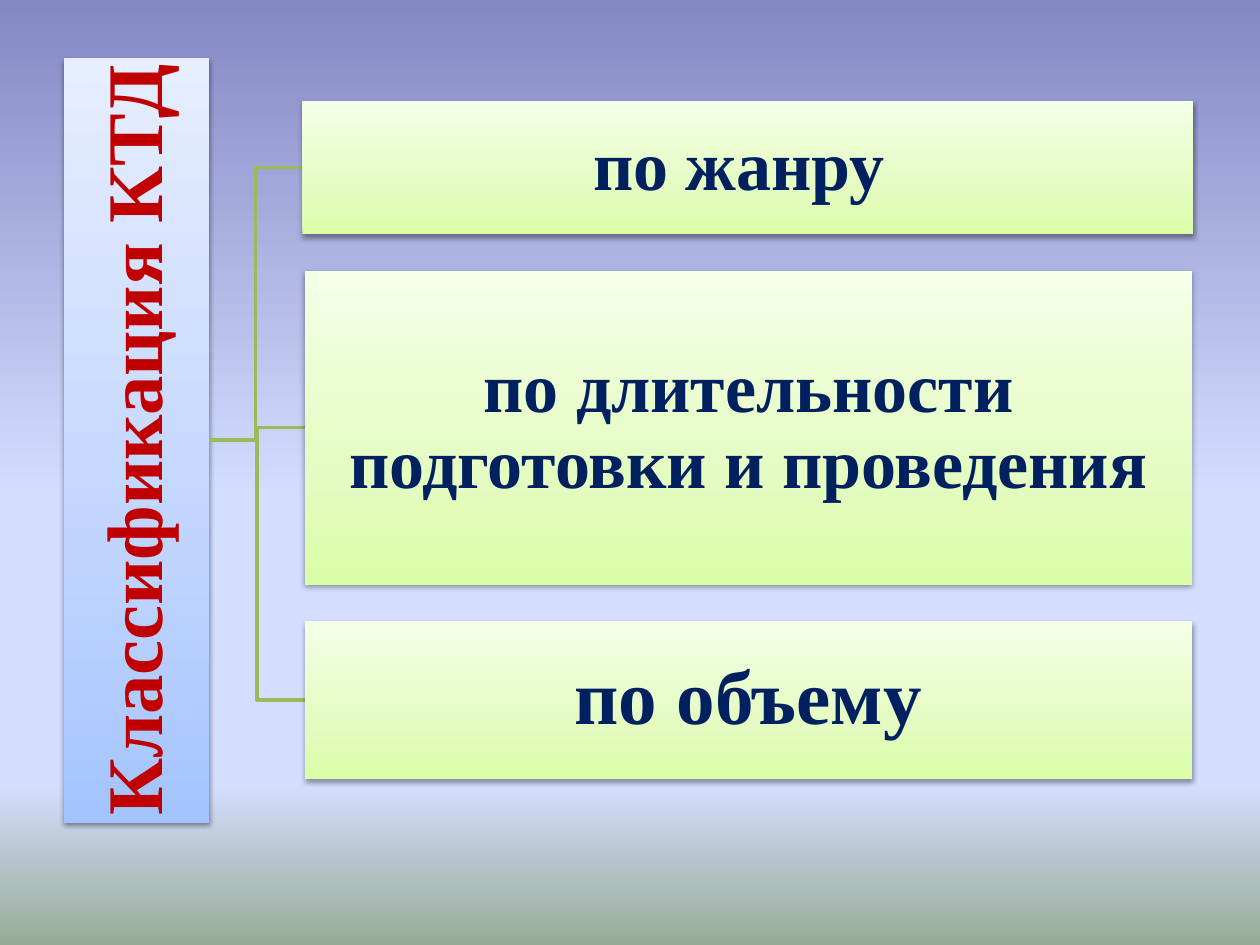
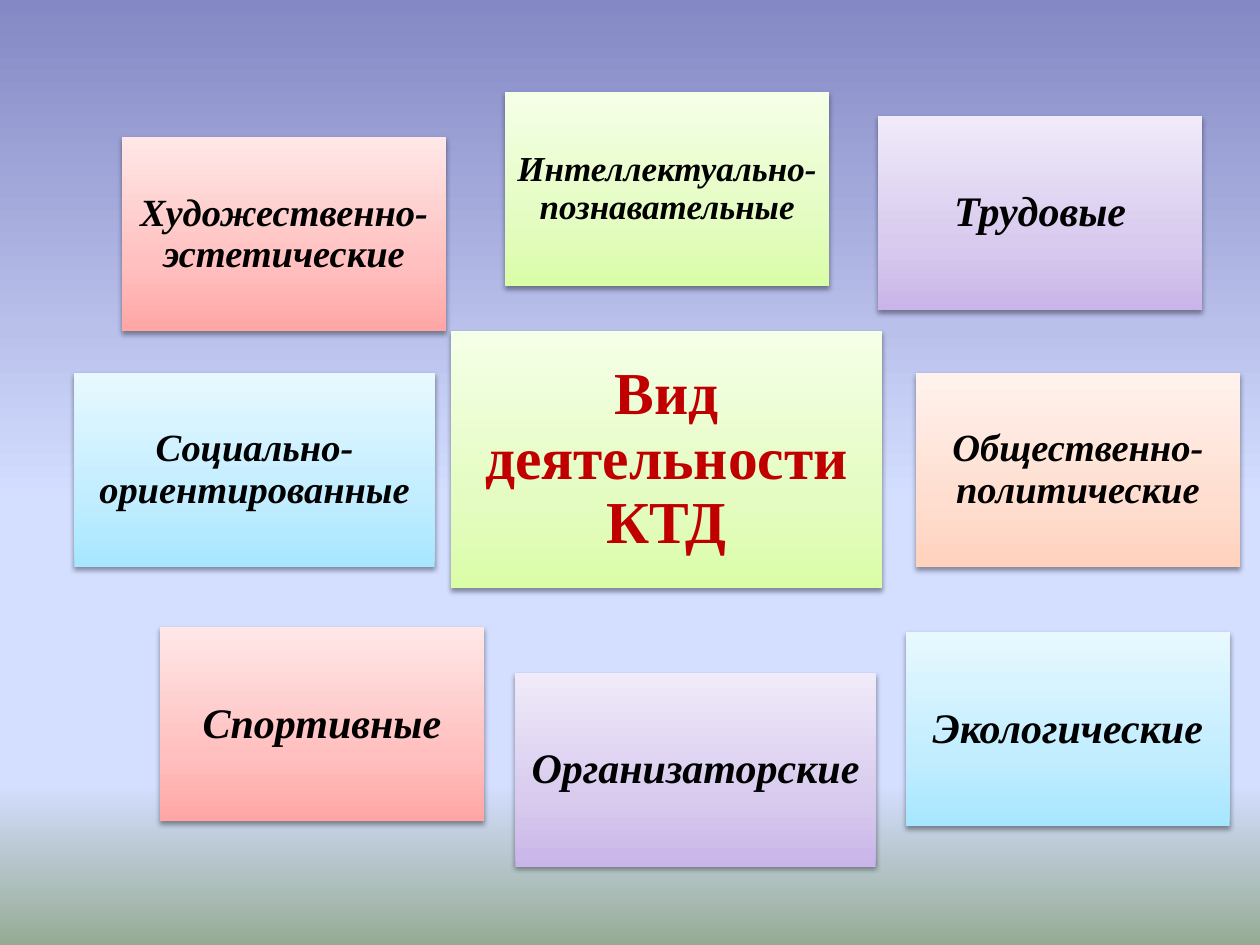
from copy import deepcopy

from lxml.etree import SubElement
from pptx import Presentation
from pptx.dml.color import RGBColor
from pptx.enum.shapes import MSO_CONNECTOR as CONNECTOR, MSO_SHAPE as SHAPE
from pptx.enum.text import MSO_ANCHOR as ANCHOR, MSO_AUTO_SIZE as AUTO_SIZE, PP_ALIGN as ALIGN
from pptx.oxml.ns import qn
from pptx.util import Inches, Pt

FONT = "Times New Roman"
TITLE_ONLY = 5

RED = RGBColor(0xC0, 0x00, 0x00)
NAVY = RGBColor(0x00, 0x20, 0x60)
BLACK = RGBColor(0x00, 0x00, 0x00)
BRANCH_GREEN = RGBColor(0x9B, 0xBB, 0x59)


def card_stops(dark, middle, light):
    """Gradient stops of a card, from its bottom edge to its top."""
    return tuple(zip((0, 0.35, 1), map(RGBColor.from_string, (dark, middle, light))))


BLUE = card_stops("A4C4FF", "BFD4FF", "E6EEFF")
GREEN = card_stops("DAFDA7", "E4FCC2", "F5FFE7")
PINK = card_stops("FFA6A5", "FFC0BF", "FFE7E7")
VIOLET = card_stops("C9B5E8", "D8CBEE", "F0EAF9")
CYAN = card_stops("A7E6FF", "C1EDFF", "E7F8FF")
ORANGE = card_stops("FFD2BD", "FFDED0", "FFF2ED")

SKY = RGBColor(0xD4, 0xDE, 0xFF)
BACKGROUND = (
    (0, RGBColor(0x84, 0x88, 0xC4)),
    (0.53, SKY),
    (0.83, SKY),
    (1, RGBColor(0x96, 0xAB, 0x94)),
)


def paint_gradient(fill, owner, stops, angle):
    """Give fill, which lies inside the element owner, any number of stops."""
    fill.gradient()
    fill.gradient_angle = angle
    gradient = next(owner.iter(qn("a:gradFill")))
    gradient.set("rotWithShape", "0")
    stop_list = gradient.find(qn("a:gsLst"))
    for _ in stops[2:]:
        stop_list.append(deepcopy(stop_list[0]))
    for stop, (position, color) in zip(fill.gradient_stops, stops):
        stop.position = position
        stop.color.rgb = color


def add_soft_shadow(shape):
    shape.shadow.inherit = False
    effects = shape._element.spPr.find(qn("a:effectLst"))
    shadow = SubElement(effects, qn("a:outerShdw"), blurRad=str(Pt(3.1)), dist=str(Pt(1.6)),
                        dir="5400000", rotWithShape="0")
    color = SubElement(shadow, qn("a:srgbClr"), val="000000")
    SubElement(color, qn("a:alpha"), val="38000")


def write_text(frame, text, *, size, color=BLACK, italic=False, inset=0.03):
    frame.word_wrap = True
    frame.auto_size = AUTO_SIZE.NONE
    frame.vertical_anchor = ANCHOR.MIDDLE
    frame.margin_left = frame.margin_right = Inches(inset)
    frame.margin_top = frame.margin_bottom = Inches(inset)
    paragraph = frame.paragraphs[0]
    paragraph.alignment = ALIGN.CENTER
    paragraph.line_spacing = 0.9
    run = paragraph.add_run()
    run.text = text
    run.font.name = FONT
    run.font.size = Pt(size)
    run.font.bold = True
    run.font.italic = italic
    run.font.color.rgb = color


class Deck:
    def __init__(self):
        self.presentation = Presentation()
        self.presentation.slide_width = Inches(10)
        self.presentation.slide_height = Inches(7.5)
        master = self.presentation.slide_master
        paint_gradient(master.background.fill, master._element, BACKGROUND, 270)
        self.slide = None

    def new_slide(self):
        layout = self.presentation.slide_layouts[TITLE_ONLY]
        self.slide = self.presentation.slides.add_slide(layout)

    def style_card(self, card, text, stops, **text_format):
        paint_gradient(card.fill, card._element, stops, 90)
        card.line.fill.background()
        add_soft_shadow(card)
        write_text(card.text_frame, text, **text_format)

    def title(self, text, box, stops, rotation=0, **text_format):
        heading = self.slide.shapes.title
        heading.left, heading.top, heading.width, heading.height = map(Inches, box)
        heading.rotation = rotation
        self.style_card(heading, text, stops, color=RED, **text_format)

    def card(self, text, box, stops, **text_format):
        card = self.slide.shapes.add_shape(SHAPE.RECTANGLE, *map(Inches, box))
        self.style_card(card, text, stops, **text_format)

    def branch(self, start, end):
        branch = self.slide.shapes.add_connector(CONNECTOR.ELBOW, *map(Inches, start + end))
        branch.line.color.rgb = BRANCH_GREEN
        branch.line.width = Pt(2)
        SubElement(branch._element.spPr, qn("a:effectLst"))

    def save(self):
        self.presentation.save("out.pptx")


def build_classification(deck):
    deck.new_slide()
    deck.title("Классификация КТД", (-1.95, 2.92, 6.07, 1.15), BLUE, rotation=270, size=45)
    root_end = (1.66, 3.49)
    criteria = (
        ("по жанру ", (2.4, 0.8, 7.07, 1.06), 40),
        ("по длительности подготовки и проведения", (2.42, 2.15, 7.04, 2.49), 40),
        ("по объему", (2.42, 4.93, 7.04, 1.25), 44),
    )
    for text, box, size in criteria:
        left, top, _, height = box
        deck.branch(root_end, (left, top + height / 2))
        deck.card(text, box, GREEN, size=size, color=NAVY)


def build_activity_kinds(deck):
    deck.new_slide()
    deck.title("Вид деятельности КТД", (3.58, 2.63, 3.42, 2.04), GREEN, size=34, inset=0.14)
    normal, wide, height = 2.57, 2.86, 1.54
    kinds = (
        ("Художественно-эстетические", 0.97, 1.09, normal, PINK, 22),
        ("Интеллектуально-познавательные", 4.01, 0.73, normal, GREEN, 20),
        ("Трудовые", 6.97, 0.92, normal, VIOLET, 24),
        ("Социально-ориентированные", 0.59, 2.96, wide, CYAN, 22),
        ("Общественно-политические", 7.27, 2.96, normal, ORANGE, 22),
        ("Спортивные", 1.27, 4.98, normal, PINK, 24),
        ("Организаторские", 4.09, 5.34, wide, VIOLET, 24),
        ("Экологические", 7.19, 5.02, normal, CYAN, 24),
    )
    for text, left, top, width, stops, size in kinds:
        deck.card(text, (left, top, width, height), stops,
                  size=size, italic=True, inset=size / 240)


def main():
    deck = Deck()
    build_classification(deck)
    build_activity_kinds(deck)
    deck.save()


if __name__ == "__main__":
    main()
